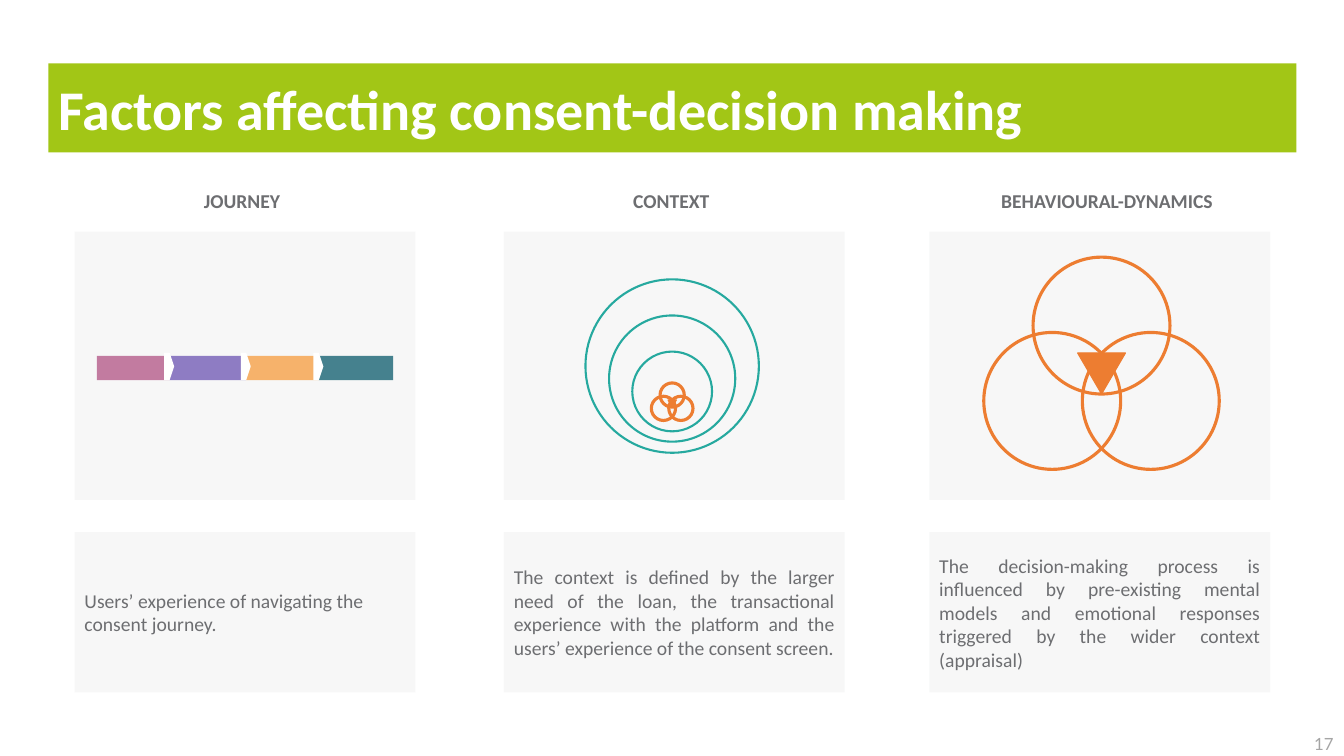
from dataclasses import dataclass
from itertools import pairwise

from lxml.etree import SubElement
from pptx import Presentation
from pptx.dml.color import RGBColor
from pptx.enum.shapes import MSO_SHAPE as Shape
from pptx.enum.text import MSO_ANCHOR as Anchor, PP_ALIGN as Align
from pptx.oxml.ns import qn
from pptx.util import Cm, Pt


@dataclass(frozen=True)
class Theme:
    font: str = "Calibri"
    number_font: str = "Lato"
    banner: str = "A2C616"
    white: str = "FFFFFF"
    text: str = "6D6E71"
    number: str = "A5A5A5"
    panel: str = "E4E5E6"
    panel_alpha: int = 29
    ring: str = "26A99F"
    venn: str = "ED7D31"
    steps: tuple = ("C27BA0", "8E7CC3", "F6B26B", "45818E")
    title_size: int = 40
    body_size: int = 14
    number_size: int = 12


class SlideBuilder:
    def __init__(self, slide, theme):
        self.slide = slide
        self.theme = theme

    def shape(self, kind, left, top, width, height, fill=None, line=None, weight=0.75):
        item = self.slide.shapes.add_shape(kind, Cm(left), Cm(top), Cm(width), Cm(height))
        item.shadow.inherit = False
        if fill:
            item.fill.solid()
            item.fill.fore_color.rgb = RGBColor.from_string(fill)
        else:
            item.fill.background()
        if line:
            item.line.color.rgb = RGBColor.from_string(line)
            item.line.width = Pt(weight)
        else:
            item.line.fill.background()
        return item

    def add_text(self, frame, words, size, color, align, anchor=Anchor.MIDDLE,
                 bold=False, font=None, inset=0.25):
        frame.word_wrap = True
        frame.vertical_anchor = anchor
        frame.margin_left = frame.margin_right = Cm(0.25)
        frame.margin_top = frame.margin_bottom = Cm(inset)
        paragraph = frame.paragraphs[0]
        paragraph.alignment = align
        run = paragraph.add_run()
        run.text = words
        run.font.name = font or self.theme.font
        run.font.size = Pt(size)
        run.font.bold = bold
        run.font.color.rgb = RGBColor.from_string(color)

    def title(self, words, left, top, width, height):
        banner = self.slide.shapes.title
        banner.left, banner.top, banner.width, banner.height = map(Cm, (left, top, width, height))
        banner.fill.solid()
        banner.fill.fore_color.rgb = RGBColor.from_string(self.theme.banner)
        self.add_text(banner.text_frame, words, self.theme.title_size, self.theme.white,
                      Align.LEFT, bold=True)

    def label(self, words, left, top, width, height, **style):
        box = self.slide.shapes.add_textbox(Cm(left), Cm(top), Cm(width), Cm(height))
        self.add_text(box.text_frame, words, anchor=Anchor.TOP, **style)

    def panel(self, left, top, width, height):
        """Add a see-through grey rectangle."""
        item = self.shape(Shape.RECTANGLE, left, top, width, height, self.theme.panel)
        color = item.element.spPr.find(qn("a:solidFill"))[0]
        SubElement(color, qn("a:alpha"), val=str(self.theme.panel_alpha * 1000))
        return item

    def circle(self, center, top, diameter, color, weight):
        self.shape(Shape.OVAL, center - diameter / 2, top, diameter, diameter,
                   line=color, weight=weight)

    def journey(self, edges, top, height):
        """Add a bar of steps, with a white arrow notch at each inner edge."""
        for (start, end), color in zip(pairwise(edges), self.theme.steps):
            self.shape(Shape.RECTANGLE, start, top, end - start, height, color)
        for edge in edges[1:-1]:
            notch = self.shape(Shape.PENTAGON, edge - 0.13, top - 0.08, 0.25, height + 0.08,
                               self.theme.white)
            notch.adjustments[0] = 0.46

    def venn(self, center, top, diameter):
        """Add three overlapping circles with a triangle where they meet."""
        spread, drop = 0.36 * diameter, 0.55 * diameter
        for dx, dy in ((spread, drop), (-spread, drop), (0, 0)):
            self.circle(center + dx, top + dy, diameter, self.theme.venn, 2.25)
        width, height = 0.35 * diameter, 0.3 * diameter
        core = self.shape(Shape.ISOSCELES_TRIANGLE, center - width / 2, top + 0.7 * diameter,
                          width, height, self.theme.venn, self.theme.venn)
        core.rotation = 180


# Heading, panel left, heading centre, description, description alignment
FACTORS = (
    ("JOURNEY", 1.88, 6.1,
     "Users’ experience of navigating the consent journey.", Align.LEFT),
    ("CONTEXT", 12.7, 16.92,
     "The context is defined by the larger need of the loan, the transactional experience "
     "with the platform and the users’ experience of the consent screen.", Align.JUSTIFY),
    ("BEHAVIOURAL-DYNAMICS", 23.42, 27.9,
     "The decision-making process is influenced by pre-existing mental models and emotional "
     "responses triggered by the wider context (appraisal)", Align.JUSTIFY),
)
PANEL_WIDTH = 8.59
HEADING_WIDTH = 7.24
STEP_EDGES = (2.44, 4.27, 6.2, 8.03, 9.91)
RING_CENTER = 16.94
RINGS = ((7.04, 4.37), (7.95, 3.18), (8.86, 2.01))  # top, diameter


def main():
    deck = Presentation()
    deck.slide_width, deck.slide_height = Cm(33.87), Cm(19.05)
    theme = Theme()
    builder = SlideBuilder(deck.slides.add_slide(deck.slide_layouts[5]), theme)

    builder.title("Factors affecting consent-decision making", 1.22, 1.6, 31.45, 2.24)
    for heading, left, center, description, align in FACTORS:
        builder.label(heading, center - HEADING_WIDTH / 2, 4.52, HEADING_WIDTH, 1.12,
                      size=theme.body_size, color=theme.text, align=Align.CENTER, bold=True)
        builder.panel(left, 5.84, PANEL_WIDTH, 6.76)
        note = builder.panel(left, 13.41, PANEL_WIDTH, 4.04)
        builder.add_text(note.text_frame, description, theme.body_size, theme.text, align)

    builder.journey(STEP_EDGES, 8.97, 0.61)
    for top, diameter in RINGS:
        builder.circle(RING_CENTER, top, diameter, theme.ring, 1.5)
    builder.venn(RING_CENTER, 9.65, 0.61)
    builder.venn(27.76, 6.48, 3.45)

    builder.label("17", 26.24, 18.36, 7.62, 0.69, size=theme.number_size, color=theme.number,
                  align=Align.RIGHT, font=theme.number_font, inset=0.13)
    deck.save("out.pptx")


if __name__ == "__main__":
    main()
